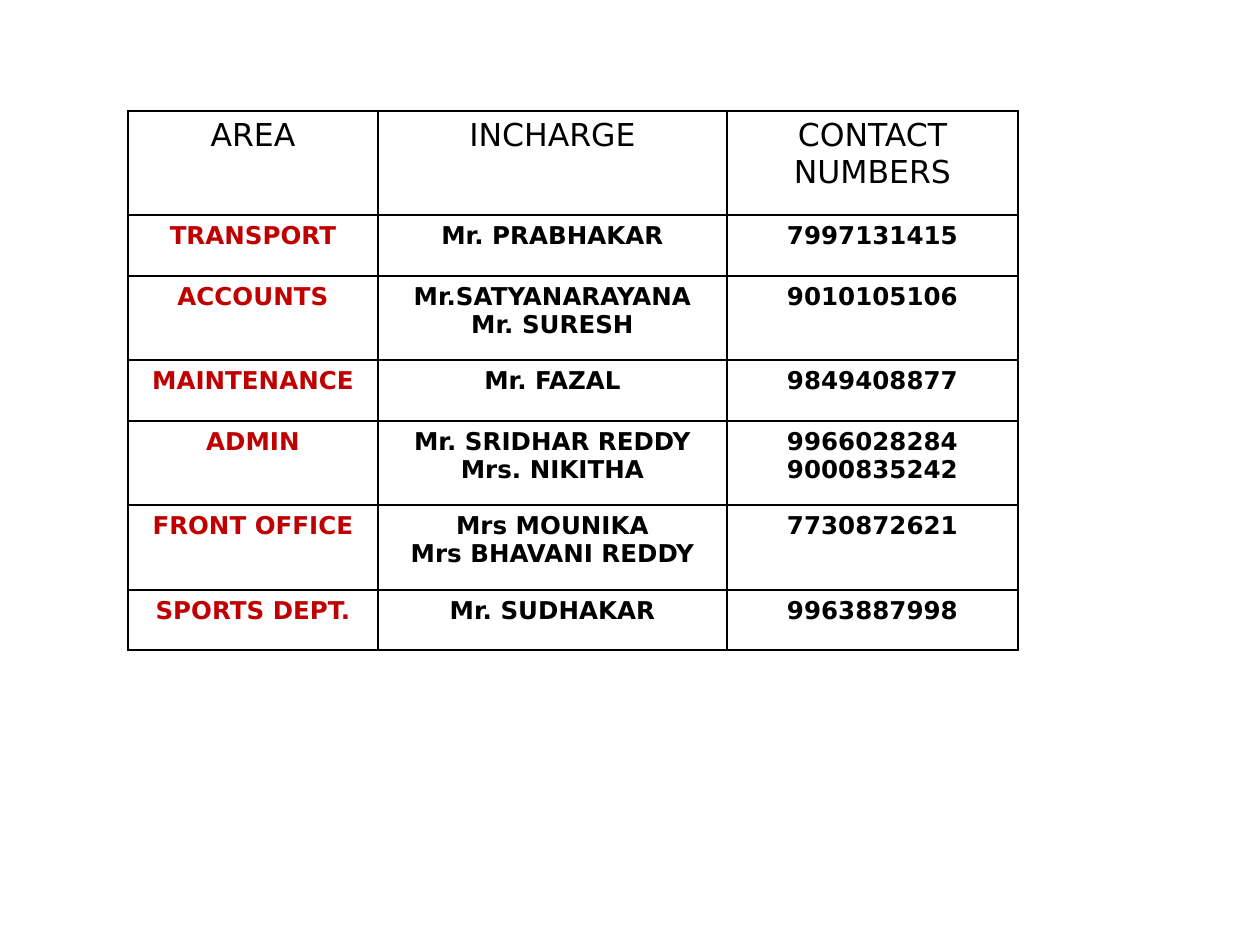
from lxml.etree import SubElement
from pptx import Presentation
from pptx.dml.color import RGBColor
from pptx.enum.text import PP_ALIGN as Align
from pptx.oxml.ns import qn
from pptx.util import Emu, Pt

PX_PER_INCH = 126
FONT = "DejaVu Sans"
BLACK = RGBColor(0x00, 0x00, 0x00)
RED = RGBColor(0xC0, 0x00, 0x00)
WHITE = RGBColor(0xFF, 0xFF, 0xFF)

COLUMN_WIDTHS = [250, 349, 291]
ROW_HEIGHTS = [104, 61, 84, 61, 84, 85, 60]
CONTACTS = [
    ("AREA", "INCHARGE", "CONTACT NUMBERS"),
    ("TRANSPORT", "Mr. PRABHAKAR", "7997131415"),
    ("ACCOUNTS", "Mr.SATYANARAYANA\nMr. SURESH", "9010105106"),
    ("MAINTENANCE", "Mr. FAZAL", "9849408877"),
    ("ADMIN", "Mr. SRIDHAR REDDY\nMrs. NIKITHA", "9966028284\n9000835242"),
    ("FRONT OFFICE", "Mrs MOUNIKA\nMrs BHAVANI REDDY", "7730872621"),
    ("SPORTS DEPT.", "Mr. SUDHAKAR", "9963887998"),
]


def px(length):
    return Emu(round(length * 914400 / PX_PER_INCH))


def set_borders(cell):
    properties = cell._tc.get_or_add_tcPr()
    for side in ("a:lnL", "a:lnR", "a:lnT", "a:lnB"):
        line = SubElement(properties, qn(side), w=str(Pt(1)))
        fill = SubElement(line, qn("a:solidFill"))
        SubElement(fill, qn("a:srgbClr"), val=str(BLACK))


def fill_cell(cell, text, size, color, bold):
    set_borders(cell)
    cell.fill.solid()
    cell.fill.fore_color.rgb = WHITE
    cell.text = text
    for para in cell.text_frame.paragraphs:
        para.alignment = Align.CENTER
        para.font.name = FONT
        para.font.size = Pt(size)
        para.font.bold = bold
        para.font.color.rgb = color


def add_contact_table(page, left, top):
    frame = page.shapes.add_table(
        len(ROW_HEIGHTS), len(COLUMN_WIDTHS), px(left), px(top),
        px(sum(COLUMN_WIDTHS)), px(sum(ROW_HEIGHTS)))
    table = frame.table
    for column, width in zip(table.columns, COLUMN_WIDTHS):
        column.width = px(width)
    for row, height in zip(table.rows, ROW_HEIGHTS):
        row.height = px(height)

    # Plain header, then bold rows with the area in red
    for r, texts in enumerate(CONTACTS):
        for c, text in enumerate(texts):
            is_header = r == 0
            color = RED if c == 0 and not is_header else BLACK
            fill_cell(table.cell(r, c), text, 18 if is_header else 14,
                      color, not is_header)


def main():
    deck = Presentation()
    deck.slide_width, deck.slide_height = px(1260), px(945)
    page = deck.slides.add_slide(deck.slide_layouts[6])
    add_contact_table(page, 128, 111)
    deck.save("out.pptx")


if __name__ == "__main__":
    main()
